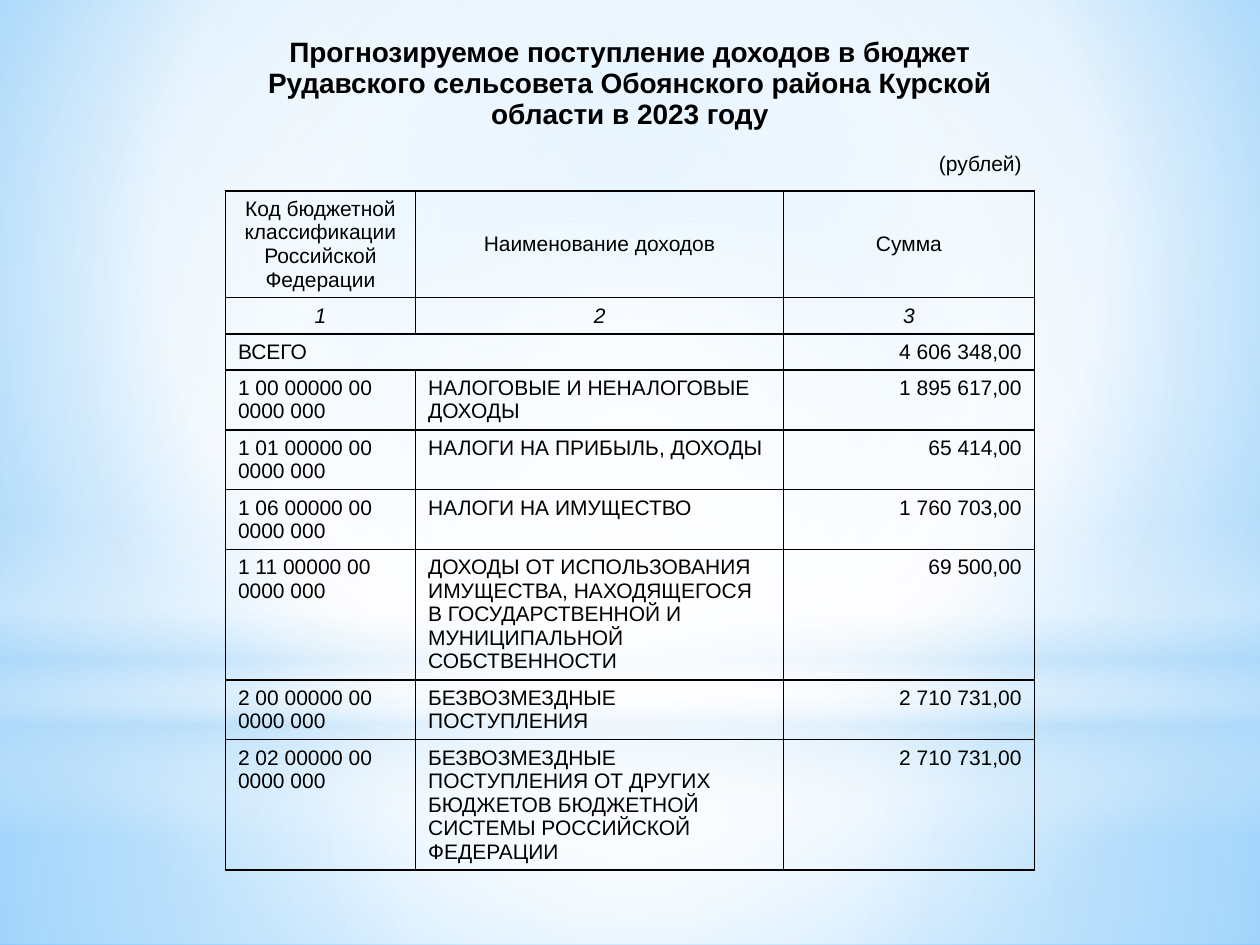
from lxml import etree
from pptx import Presentation
from pptx.dml.color import RGBColor
from pptx.enum.shapes import MSO_SHAPE
from pptx.enum.text import MSO_ANCHOR, PP_ALIGN
from pptx.oxml.ns import qn
from pptx.util import Pt

RECT, OVAL = MSO_SHAPE.RECTANGLE, MSO_SHAPE.OVAL
LEFT, CENTER, RIGHT = PP_ALIGN.LEFT, PP_ALIGN.CENTER, PP_ALIGN.RIGHT
TOP, MIDDLE = MSO_ANCHOR.TOP, MSO_ANCHOR.MIDDLE
NO_STYLE = "{2D5ABB26-0587-4C30-8999-92F81FD0307C}"
FONT = "Arial"
BLACK, WHITE, SKY = "000000", "FFFFFF", "B4DCFA"

TITLE = ("Прогнозируемое поступление доходов в бюджет Рудавского "
         "сельсовета Обоянского района Курской области в 2023 году")
HEADER = ("Код бюджетной классификации Российской Федерации",
          "Наименование доходов", "Сумма")
INCOME = [
    ("1 00 00000 00 0000 000", "НАЛОГОВЫЕ И НЕНАЛОГОВЫЕ ДОХОДЫ", "1 895 617,00"),
    ("1 01 00000 00 0000 000", "НАЛОГИ НА ПРИБЫЛЬ, ДОХОДЫ", "65 414,00"),
    ("1 06 00000 00 0000 000", "НАЛОГИ НА ИМУЩЕСТВО", "1 760 703,00"),
    ("1 11 00000 00 0000 000",
     "ДОХОДЫ ОТ ИСПОЛЬЗОВАНИЯ ИМУЩЕСТВА, НАХОДЯЩЕГОСЯ В ГОСУДАРСТВЕННОЙ "
     "И МУНИЦИПАЛЬНОЙ СОБСТВЕННОСТИ", "69 500,00"),
    ("2 00 00000 00 0000 000", "БЕЗВОЗМЕЗДНЫЕ ПОСТУПЛЕНИЯ", "2 710 731,00"),
    ("2 02 00000 00 0000 000",
     "БЕЗВОЗМЕЗДНЫЕ ПОСТУПЛЕНИЯ ОТ ДРУГИХ БЮДЖЕТОВ БЮДЖЕТНОЙ СИСТЕМЫ "
     "РОССИЙСКОЙ ФЕДЕРАЦИИ", "2 710 731,00"),
]
COLS = (108.7, 118.8, 91.5, 143.3)
ROWS = (61.5, 30.5, 61, 20.6, 20.6, 34.2, 34.2, 34.2, 74.5, 34.2, 74.5)


def rgb(color):
    return RGBColor.from_string(color)


def child(parent, tag, **attrs):
    return etree.SubElement(parent, qn(tag), {k: str(v) for k, v in attrs.items()})


def set_gradient(owner, fill, stops, center=None):
    fill.gradient()
    grad = next(owner.iter(qn("a:gradFill")))
    for old in list(grad):
        grad.remove(old)
    gs_list = child(grad, "a:gsLst")
    for pos, color, opacity in stops:
        gs = child(gs_list, "a:gs", pos=pos * 1000)
        clr = child(gs, "a:srgbClr", val=color)
        if opacity < 100:
            child(clr, "a:alpha", val=opacity * 1000)
    if center:
        circle = child(grad, "a:path", path="circle")
        child(circle, "a:fillToRect",
              **{side: v * 1000 for side, v in zip("ltrb", center)})
    else:
        child(grad, "a:lin", ang=90 * 60000, scaled=0)


def add_glow(s, kind, box, stops, center=None):
    sp = s.shapes.add_shape(kind, *map(Pt, box))
    sp.shadow.inherit = False
    sp.line.fill.background()
    set_gradient(sp._element, sp.fill, stops, center)


def add_backdrop(s, width, height):
    middle = (50, 50, 50, 50)
    horizon = 402
    set_gradient(s._element, s.background.fill,
                 [(0, "9ED5FF", 100), (60, WHITE, 100), (100, "5BB9FF", 100)],
                 (20, 10, 20, 60))
    add_glow(s, RECT, (0, horizon, width, height - horizon),
             [(0, WHITE, 91), (37, WHITE, 76), (100, SKY, 79)], middle)
    add_glow(s, RECT, (0, 0, width, horizon),
             [(0, WHITE, 89), (48, WHITE, 62), (100, SKY, 79)], middle)
    add_glow(s, RECT, (0, 296.6, width, 180),
             [(0, WHITE, 0), (29, WHITE, 30), (45, SKY, 40),
              (55, WHITE, 26), (65, SKY, 60), (100, WHITE, 0)])
    add_glow(s, OVAL, (0, 126, width, 402),
             [(0, WHITE, 100), (56, WHITE, 0)], middle)


def set_borders(cell, sides):
    tc_pr = cell._tc.get_or_add_tcPr()
    for side in sides:
        ln = child(tc_pr, f"a:ln{side}", w=Pt(1))
        child(child(ln, "a:solidFill"), "a:srgbClr", val=BLACK)
    cell.fill.background()


def write(cell, text, align, anchor=TOP, size=12, bold=False, italic=False):
    cell.text = text
    cell.vertical_anchor = anchor
    p = cell.text_frame.paragraphs[0]
    p.alignment = align
    p.font.name, p.font.size = FONT, Pt(size)
    p.font.bold, p.font.italic = bold, italic
    p.font.color.rgb = rgb(BLACK)


def add_income_table(s, left, top):
    frame = s.shapes.add_table(len(ROWS), len(COLS), Pt(left), Pt(top),
                               Pt(sum(COLS)), Pt(sum(ROWS)))
    table = frame.table
    table.first_row = table.horz_banding = False
    table._tbl.tblPr.find(qn("a:tableStyleId")).text = NO_STYLE
    for col, width in zip(table.columns, COLS):
        col.width = Pt(width)
    for i, height in enumerate(ROWS):
        table.rows[i].height = Pt(height)
        sides = "" if i == 0 else "B" if i == 1 else "LRTB"
        for cell in table.rows[i].cells:
            set_borders(cell, sides)

    table.cell(0, 0).merge(table.cell(0, 3))
    write(table.cell(0, 0), TITLE, CENTER, MIDDLE, size=16, bold=True)
    write(table.cell(1, 3), "(рублей)", RIGHT, MIDDLE)
    table.cell(4, 0).merge(table.cell(4, 2))
    write(table.cell(4, 0), "ВСЕГО", LEFT)
    write(table.cell(4, 3), "4 606 348,00", RIGHT)

    body = [(2, HEADER), (3, ("1", "2", "3")), *enumerate(INCOME, 5)]
    for i, texts in body:
        table.cell(i, 1).merge(table.cell(i, 2))
        for j, text, align in zip((0, 1, 3), texts, (LEFT, LEFT, RIGHT)):
            if i < 5:
                write(table.cell(i, j), text, CENTER, MIDDLE, italic=i == 3)
            else:
                write(table.cell(i, j), text, align)


def main():
    width, height = 720, 540
    prs = Presentation()
    prs.slide_width, prs.slide_height = Pt(width), Pt(height)
    s = prs.slides.add_slide(prs.slide_layouts[6])
    add_backdrop(s, width, height)
    add_income_table(s, 128.8, 17.2)
    prs.save("out.pptx")


if __name__ == "__main__":
    main()
